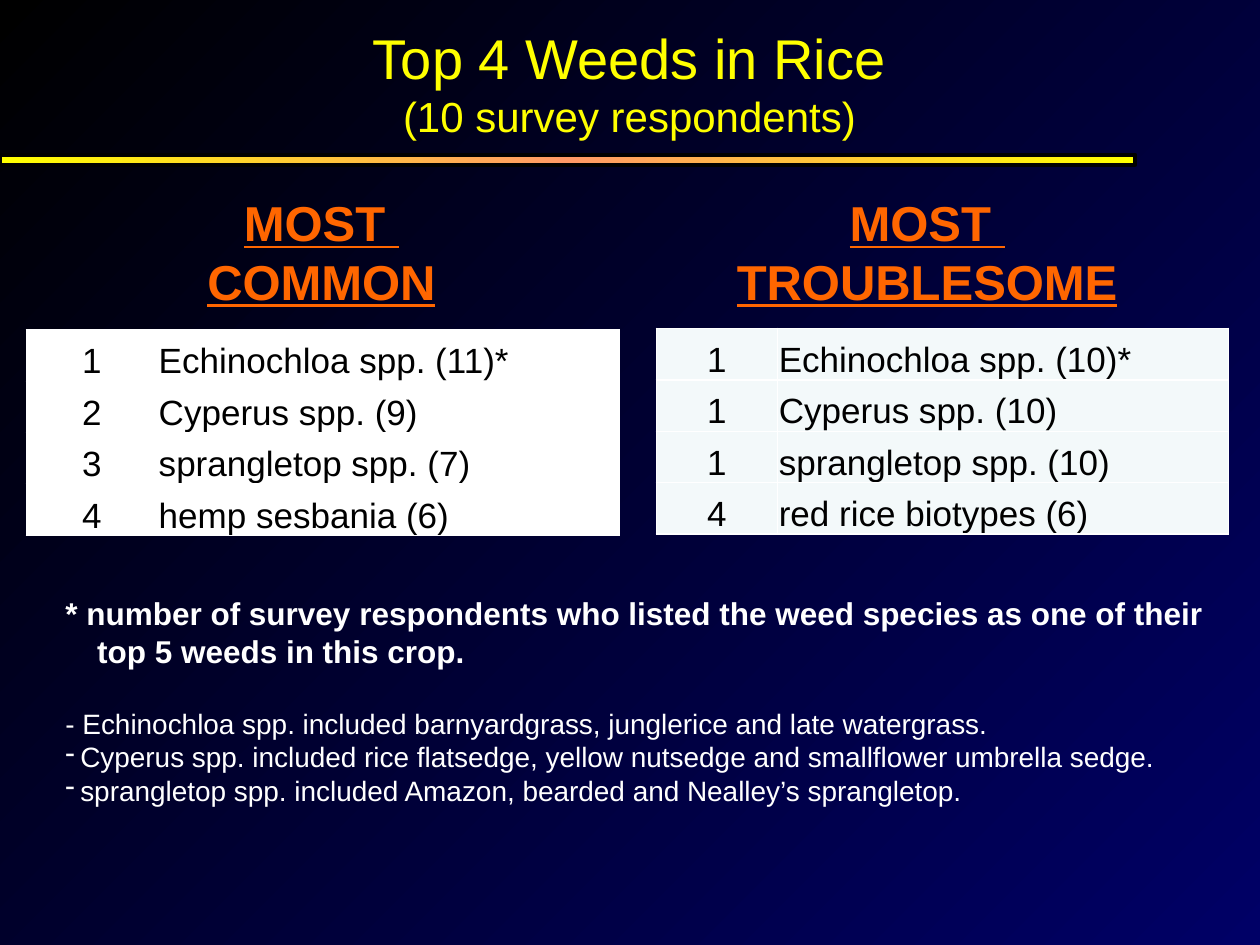
from copy import deepcopy

from lxml import etree
from pptx import Presentation
from pptx import util as u
from pptx.dml.color import RGBColor
from pptx.enum import shapes, text
from pptx.oxml.ns import qn

YELLOW, ORANGE, WHITE, BLACK = "FFFF00", "FF6600", "FFFFFF", "000000"


def rgb(value):
    return RGBColor.from_string(value)


def cm_box(box):
    return [u.Cm(length) for length in box]


def fill_gradient(fill, element, colours, angle):
    """Spread the colours evenly; element is the XML that holds the fill."""
    fill.gradient()
    fill.gradient_angle = angle
    stop_list = element.find(".//" + qn("a:gsLst"))
    for _ in colours[2:]:
        stop_list.append(deepcopy(stop_list[0]))
    for index, (stop, colour) in enumerate(zip(fill.gradient_stops, colours)):
        stop.position = index / (len(colours) - 1)
        stop.color.rgb = rgb(colour)


def add_span(para, words, size, colour, bold=False, underline=False):
    span = para.add_run()
    span.text = words
    font = span.font
    font.name, font.size, font.bold = "Arial", u.Pt(size), bold
    font.underline = underline
    font.color.rgb = rgb(colour)


def add_text_frame(page, box, wrap=True):
    frame = page.shapes.add_textbox(*cm_box(box)).text_frame
    frame.word_wrap = wrap
    return frame


def next_para(frame, index, align=text.PP_ALIGN.LEFT):
    para = frame.paragraphs[0] if index == 0 else frame.add_paragraph()
    para.alignment = align
    return para


def add_title(page, box):
    frame = add_text_frame(page, box)
    frame.vertical_anchor = text.MSO_ANCHOR.MIDDLE
    lines = [("Top 4 Weeds in Rice", 32), ("(10 survey respondents)", 24)]
    for index, (words, size) in enumerate(lines):
        add_span(next_para(frame, index, text.PP_ALIGN.CENTER), words, size, YELLOW)


def add_title_bar(page, box):
    bar = page.shapes.add_shape(shapes.MSO_SHAPE.RECTANGLE, *cm_box(box))
    bar.shadow.inherit = False
    fill_gradient(bar.fill, bar.element, [YELLOW, "FF9966", YELLOW], 0)
    bar.line.color.rgb = rgb(BLACK)
    bar.line.width = u.Pt(2.25)


def add_heading(page, box, lines, wrap):
    frame = add_text_frame(page, box, wrap)
    for index, words in enumerate(lines):
        para = next_para(frame, index, text.PP_ALIGN.CENTER)
        add_span(para, words, 28, ORANGE, bold=True, underline=True)


def add_borders(cell, colour):
    properties = cell._tc.get_or_add_tcPr()
    for side in ("a:lnL", "a:lnR", "a:lnT", "a:lnB"):
        line = etree.SubElement(properties, qn(side), w=str(u.Pt(1)))
        solid = etree.SubElement(line, qn("a:solidFill"))
        etree.SubElement(solid, qn("a:srgbClr"), val=colour)


def add_ranking(page, box, rank_width, fill, weeds):
    """Table of (rank, weed) rows; the weed column takes the remaining width."""
    table = page.shapes.add_table(len(weeds), 2, *cm_box(box)).table
    table.first_row = table.horz_banding = False
    table.columns[0].width = u.Cm(rank_width)
    table.columns[1].width = u.Cm(box[2] - rank_width)
    aligns = (text.PP_ALIGN.CENTER, text.PP_ALIGN.LEFT)
    for row, entry in enumerate(weeds):
        for column, words in enumerate(entry):
            cell = table.cell(row, column)
            cell.margin_left = cell.margin_right = cell.margin_top = u.Cm(0.03)
            cell.margin_bottom = 0
            cell.vertical_anchor = text.MSO_ANCHOR.BOTTOM
            add_borders(cell, WHITE)
            cell.fill.solid()
            cell.fill.fore_color.rgb = rgb(fill)
            add_span(next_para(cell.text_frame, 0, aligns[column]), words, 20, BLACK)


def set_hanging(para, indent, bullet=None):
    properties = para._p.get_or_add_pPr()
    properties.set("marL", str(u.Cm(indent)))
    properties.set("indent", str(-u.Cm(indent)))
    if bullet:
        etree.SubElement(properties, qn("a:buChar"), char=bullet)


def add_notes(page, box):
    frame = add_text_frame(page, box)
    footnote = next_para(frame, 0)
    set_hanging(footnote, 0.64)
    add_span(footnote, "* number of survey respondents who listed the weed species "
             "as one of their top 5 weeds in this crop.", 18, WHITE, bold=True)
    species = [
        ("- Echinochloa spp. included barnyardgrass, junglerice and late watergrass.", None),
        ("Cyperus spp. included rice flatsedge, yellow nutsedge and smallflower "
         "umbrella sedge.", "-"),
        ("sprangletop spp. included Amazon, bearded and Nealley’s sprangletop.", "-"),
    ]
    for index, (words, bullet) in enumerate(species, start=1):
        para = next_para(frame, index)
        if index == 1:
            para.space_before = u.Pt(20.7)
        set_hanging(para, 0.3, bullet)
        add_span(para, words, 16, WHITE)


def main():
    deck = Presentation()
    deck.slide_width, deck.slide_height = u.Cm(25.4), u.Cm(19.05)
    page = deck.slides.add_slide(deck.slide_layouts[6])
    fill_gradient(page.background.fill, page.element, [BLACK, "000066"], 315)

    add_title(page, (0.84, 0.13, 23.7, 3.05))
    add_title_bar(page, (0, 3.12, 22.89, 0.2))
    add_heading(page, (3.43, 3.76, 6.1, 2.64), ["MOST ", "COMMON"], wrap=True)
    add_heading(page, (14.55, 3.76, 8.28, 2.64), ["MOST ", "TROUBLESOME"], wrap=False)
    add_ranking(page, (0.53, 6.65, 11.96, 4.15), 2.64, WHITE, [
        ("1", "Echinochloa spp. (11)*"),
        ("2", "Cyperus spp. (9)"),
        ("3", "sprangletop spp. (7)"),
        ("4", "hemp sesbania (6)"),
    ])
    add_ranking(page, (13.23, 6.62, 11.53, 4.15), 2.44, "F3F9FA", [
        ("1", "Echinochloa spp. (10)*"),
        ("1", "Cyperus spp. (10)"),
        ("1", "sprangletop spp. (10)"),
        ("4", "red rice biotypes (6)"),
    ])
    add_notes(page, (1.07, 11.86, 23.5, 4.62))
    deck.save("out.pptx")


if __name__ == "__main__":
    main()
